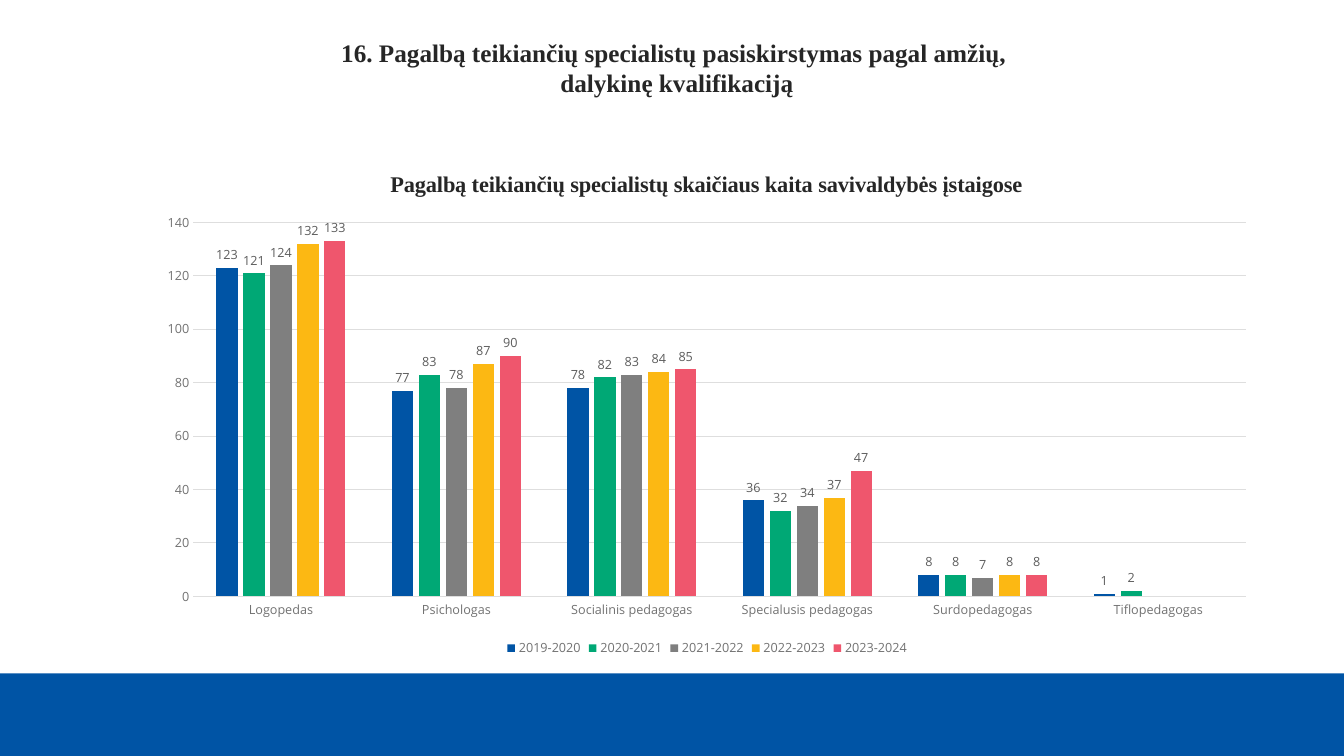
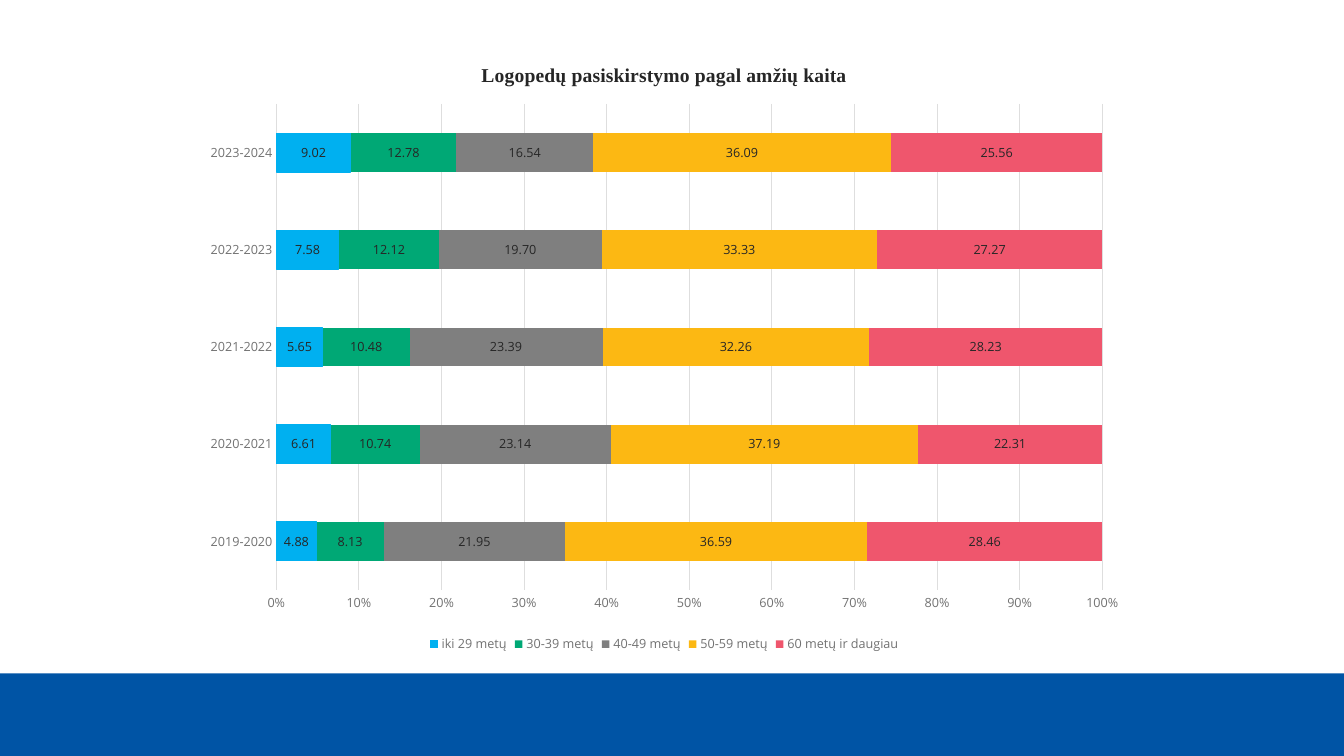
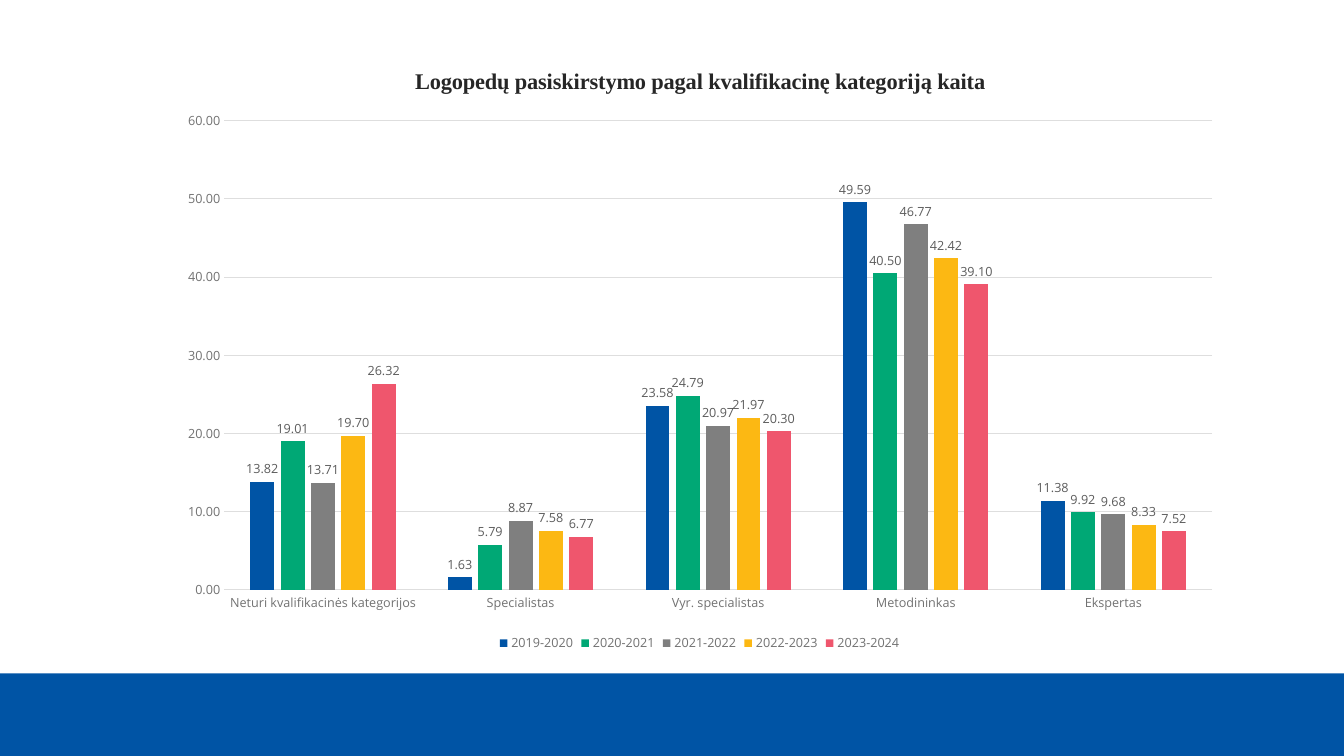
import pptx
import pptx.chart.data
import pptx.dml.color
import pptx.enum.chart
import pptx.enum.shapes
import pptx.enum.text
import pptx.util
from lxml import etree

Pt = pptx.util.Pt
RGBColor = pptx.dml.color.RGBColor
ChartType = pptx.enum.chart.XL_CHART_TYPE
LabelPosition = pptx.enum.chart.XL_LABEL_POSITION
Placeholder = pptx.enum.shapes.PP_PLACEHOLDER

BLUE = RGBColor(0x00, 0x54, 0xA5)
CYAN = RGBColor(0x00, 0xB0, 0xF0)
GREEN = RGBColor(0x00, 0xA8, 0x75)
GRAY = RGBColor(0x7F, 0x7F, 0x7F)
YELLOW = RGBColor(0xFC, 0xB8, 0x13)
RED = RGBColor(0xEF, 0x56, 0x6D)
INK = RGBColor(0x26, 0x26, 0x26)
LABEL = RGBColor(0x5C, 0x5C, 0x5C)
AXIS = RGBColor(0x72, 0x72, 0x72)
GRID = RGBColor(0xDE, 0xDE, 0xDE)

TITLE_FONT = "Times New Roman"
BODY_FONT = "Open Sans"
WIDTH, HEIGHT, BAND_TOP = 960, 540, 481
YEARS = ["2019-2020", "2020-2021", "2021-2022", "2022-2023", "2023-2024"]
TITLE_ONLY, BLANK = 5, 6


def style_font(font, name, size, color, bold=False):
    font.name, font.size, font.bold = name, Pt(size), bold
    font.color.rgb = color


def set_layout(parent, index, frame, box, inner=False):
    """Place a chart part at box, given in slide points, within the chart frame."""
    for old in parent.xpath("c:layout"):
        parent.remove(old)
    ns = "{%s}" % parent.nsmap["c"]
    layout = etree.Element(ns + "layout")
    manual = etree.SubElement(layout, ns + "manualLayout")
    if inner:
        etree.SubElement(manual, ns + "layoutTarget", val="inner")
    left, top, width, height = frame
    fractions = [(box[0] - left) / width, (box[1] - top) / height]
    fractions += [size / total for size, total in zip(box[2:], (width, height))]
    keys = ["x", "y", "w", "h"][:len(box)]
    for key in keys[:2]:
        etree.SubElement(manual, ns + key + "Mode", val="edge")
    for key, value in zip(keys, fractions):
        etree.SubElement(manual, ns + key, val=f"{value:.4f}")
    parent.insert(index, layout)


charts = [
    dict(
        heading=["16. Pagalbą teikiančių specialistų pasiskirstymas pagal amžių, ",
                 "dalykinę kvalifikaciją"],
        title="Pagalbą teikiančių specialistų skaičiaus kaita savivaldybės įstaigose",
        title_size=16, title_at=(275.9, 118.7),
        frame=(103.68, 108.72, 802.8, 363.6), plot=(138, 158.9, 752, 267.2),
        type=ChartType.COLUMN_CLUSTERED, gap=219, overlap=-27,
        colors=[BLUE, GREEN, GRAY, YELLOW, RED],
        label_color=LABEL, label_position=LabelPosition.OUTSIDE_END,
        label_format="#,##0", axis_format="#,##0", axis_max=140, axis_step=20,
        categories=["Logopedas", "Psichologas", "Socialinis pedagogas",
                    "Specialusis pedagogas", "Surdopedagogas", "Tiflopedagogas"],
        names=YEARS,
        values=[[123, 77, 78, 36, 8, 1],
                [121, 83, 82, 32, 8, 2],
                [124, 78, 83, 34, 7, None],
                [132, 87, 84, 37, 8, None],
                [133, 90, 85, 47, 8, None]],
    ),
    dict(
        heading=None,
        title="Logopedų pasiskirstymo pagal amžių kaita",
        title_size=14, title_at=(341.3, 42.1),
        frame=(136.8, 30.24, 675.36, 439.2), plot=(197.4, 74.3, 590, 347.2),
        type=ChartType.BAR_STACKED_100, gap=150, overlap=100,
        colors=[CYAN, GREEN, GRAY, YELLOW, RED],
        label_color=INK, label_position=LabelPosition.CENTER,
        label_format="0.00", axis_format="0%", axis_max=None, axis_step=None,
        categories=YEARS,
        names=["iki 29 metų", "30-39 metų", "40-49 metų", "50-59 metų",
               "60 metų ir daugiau"],
        values=[[4.88, 6.61, 5.65, 7.58, 9.02],
                [8.13, 10.74, 10.48, 12.12, 12.78],
                [21.95, 23.14, 23.39, 19.7, 16.54],
                [36.59, 37.19, 32.26, 33.33, 36.09],
                [28.46, 22.31, 28.23, 27.27, 25.56]],
    ),
    dict(
        heading=None,
        title="Logopedų pasiskirstymo pagal kvalifikacinę kategoriją kaita",
        title_size=16, title_at=(293.6, 45),
        frame=(118.8, 33.12, 761.76, 435.6), plot=(160.2, 86.3, 705.7, 335.2),
        type=ChartType.COLUMN_CLUSTERED, gap=219, overlap=-27,
        colors=[BLUE, GREEN, GRAY, YELLOW, RED],
        label_color=LABEL, label_position=LabelPosition.OUTSIDE_END,
        label_format="0.00", axis_format="0.00", axis_max=60, axis_step=10,
        categories=["Neturi kvalifikacinės kategorijos", "Specialistas",
                    "Vyr. specialistas", "Metodininkas", "Ekspertas"],
        names=YEARS,
        values=[[13.82, 1.63, 23.58, 49.59, 11.38],
                [19.01, 5.79, 24.79, 40.5, 9.92],
                [13.71, 8.87, 20.97, 46.77, 9.68],
                [19.7, 7.58, 21.97, 42.42, 8.33],
                [26.32, 6.77, 20.3, 39.1, 7.52]],
    ),
]

prs = pptx.Presentation()
prs.slide_width, prs.slide_height = Pt(WIDTH), Pt(HEIGHT)

# The deck has no date, footer or slide number
for base in (prs.slide_master, *prs.slide_layouts):
    for sp in list(base.placeholders):
        if sp.placeholder_format.type in (Placeholder.DATE, Placeholder.FOOTER,
                                          Placeholder.SLIDE_NUMBER):
            sp.element.getparent().remove(sp.element)

for c in charts:
    s = prs.slides.add_slide(prs.slide_layouts[TITLE_ONLY if c["heading"] else BLANK])

    # Bottom band
    band = s.shapes.add_shape(pptx.enum.shapes.MSO_SHAPE.RECTANGLE,
                              0, Pt(BAND_TOP), Pt(WIDTH), Pt(HEIGHT - BAND_TOP))
    band.shadow.inherit = False
    band.fill.solid()
    band.fill.fore_color.rgb = BLUE
    band.line.fill.background()

    # Slide title
    if c["heading"]:
        sp = s.shapes.title
        sp.left, sp.top, sp.width, sp.height = Pt(234), Pt(23), Pt(499), Pt(51)
        tf = sp.text_frame
        tf.text = "\n".join(c["heading"])
        tf.word_wrap = False
        tf.auto_size = pptx.enum.text.MSO_AUTO_SIZE.NONE
        tf.vertical_anchor = pptx.enum.text.MSO_ANCHOR.TOP
        for p in tf.paragraphs:
            p.alignment = pptx.enum.text.PP_ALIGN.CENTER
            for r in p.runs:
                style_font(r.font, TITLE_FONT, 18, INK, bold=True)

    # Chart and its title
    data = pptx.chart.data.CategoryChartData(number_format=c["label_format"])
    data.categories = c["categories"]
    for name, values in zip(c["names"], c["values"]):
        data.add_series(name, values)
    frame = [Pt(v) for v in c["frame"]]
    chart = s.shapes.add_chart(c["type"], *frame, data).chart
    style_font(chart.font, BODY_FONT, 10, INK)
    chart.has_title = True
    tf = chart.chart_title.text_frame
    tf.text = c["title"]
    style_font(tf.paragraphs[0].runs[0].font, TITLE_FONT, c["title_size"], INK, bold=True)
    chart.chart_title.include_in_layout = False
    set_layout(chart.element.xpath("c:chart/c:title")[0], 1, c["frame"], c["title_at"])
    set_layout(chart.element.xpath("c:chart/c:plotArea")[0], 0, c["frame"], c["plot"],
               inner=True)

    # Legend
    chart.has_legend = True
    chart.legend.position = pptx.enum.chart.XL_LEGEND_POSITION.BOTTOM
    chart.legend.include_in_layout = False
    style_font(chart.legend.font, BODY_FONT, 9, AXIS)

    # Axes
    for axis in (chart.category_axis, chart.value_axis):
        axis.major_tick_mark = axis.minor_tick_mark = pptx.enum.chart.XL_TICK_MARK.NONE
        style_font(axis.tick_labels.font, BODY_FONT, 9, AXIS)
    chart.value_axis.has_major_gridlines = True
    chart.value_axis.format.line.fill.background()
    for line in (chart.category_axis.format.line,
                 chart.value_axis.major_gridlines.format.line):
        line.color.rgb = GRID
        line.width = Pt(0.75)
    chart.value_axis.tick_labels.number_format = c["axis_format"]
    chart.value_axis.tick_labels.number_format_is_linked = False
    if c["axis_max"]:
        chart.value_axis.minimum_scale = 0
        chart.value_axis.maximum_scale = c["axis_max"]
        chart.value_axis.major_unit = c["axis_step"]

    # Bars and their labels
    plot = chart.plots[0]
    plot.vary_by_categories = False
    plot.gap_width, plot.overlap = c["gap"], c["overlap"]
    for series, color in zip(plot.series, c["colors"]):
        series.invert_if_negative = False
        series.format.fill.solid()
        series.format.fill.fore_color.rgb = color
        if color == CYAN:
            series.format.line.color.rgb = CYAN
            series.format.line.width = Pt(0.75)
        labels = series.data_labels
        labels.show_value = True
        labels.position = c["label_position"]
        labels.number_format = c["label_format"]
        labels.number_format_is_linked = False
        style_font(labels.font, BODY_FONT, 9, c["label_color"])

prs.save("out.pptx")
